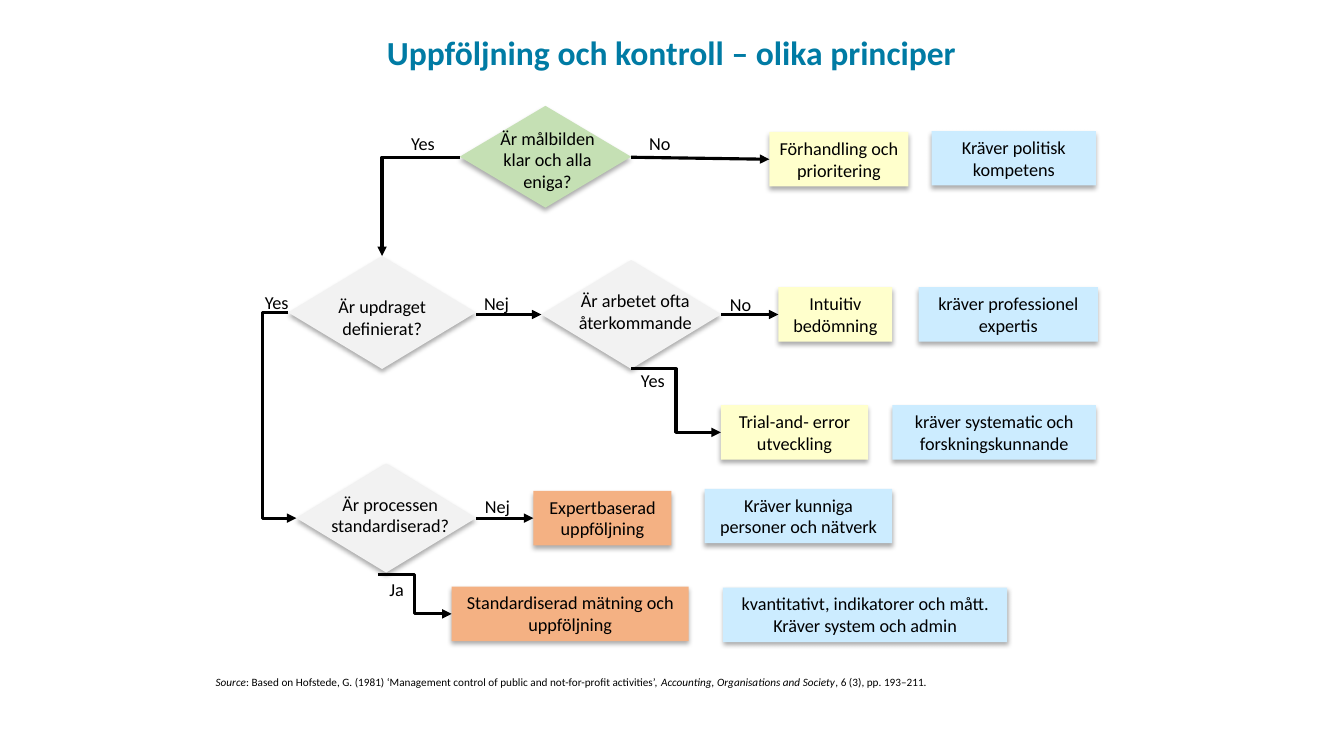
from dataclasses import dataclass

from lxml import etree
from pptx import Presentation
from pptx.dml.color import RGBColor
from pptx.enum.shapes import MSO_CONNECTOR, MSO_SHAPE
from pptx.enum.text import MSO_ANCHOR, MSO_AUTO_SIZE, PP_ALIGN
from pptx.oxml.ns import qn
from pptx.util import Inches, Pt

RECT, DIAMOND = MSO_SHAPE.RECTANGLE, MSO_SHAPE.DIAMOND
STRAIGHT, ELBOW = MSO_CONNECTOR.STRAIGHT, MSO_CONNECTOR.ELBOW
LEFT, CENTER = PP_ALIGN.LEFT, PP_ALIGN.CENTER
TOP, NO_FIT = MSO_ANCHOR.TOP, MSO_AUTO_SIZE.NONE

FONT = "Calibri"
BOX_H = 0.54
LABEL_W, LABEL_H = 0.57, 0.32
COLORS = {
    "black": "000000",
    "title": "007BA4",
    "blue": "CCECFF",
    "yellow": "FFFFCC",
    "orange": "F4B183",
    "green": "C5E0B4",
    "gray": "F2F2F2",
}

Area = tuple[float, float, float, float]
Point = tuple[float, float]


@dataclass
class Box:
    text: str
    left: float
    top: float
    width: float
    color: str


@dataclass
class Question:
    text: str
    area: Area
    text_area: Area
    color: str = "gray"


@dataclass
class Arrow:
    start: Point
    end: Point
    bend: float | None = None  # share of the width where the line turns
    corner: bool = False       # a single turn


@dataclass
class Label:
    text: str
    left: float
    top: float


BOXES = [
    Box("Kräver politisk kompetens", 9.24, 1.3, 1.63, "blue"),
    Box("kräver professionel expertis", 9.11, 2.85, 1.78, "blue"),
    Box("kräver systematic och forskningskunnande", 8.85, 4.02, 2.02, "blue"),
    Box("Kräver kunniga personer och nätverk", 6.99, 4.85, 1.86, "blue"),
    Box("kvantitativt, indikatorer och mått.\nKräver system och admin",
        7.17, 5.83, 2.82, "blue"),
    Box("Förhandling och prioritering", 7.63, 1.31, 1.38, "yellow"),
    Box("Intuitiv bedömning", 7.72, 2.85, 1.13, "yellow"),
    Box("Trial-and- error utveckling", 7.15, 4.02, 1.46, "yellow"),
    Box("Expertbaserad uppföljning", 5.29, 4.87, 1.37, "orange"),
    Box("Standardiserad mätning och uppföljning", 4.48, 5.82, 2.35, "orange"),
]
QUESTIONS = [
    Question("Är målbilden klar och alla eniga?",
             (4.56, 1.05, 1.7, 1.01), (4.71, 1.21, 1.44, 0.76), "green"),
    Question("Är updraget definierat?",
             (2.86, 2.54, 1.86, 1.12), (2.94, 2.88, 1.7, BOX_H)),
    Question("Är arbetet ofta återkommande",
             (5.37, 2.58, 1.78, 1.08), (5.46, 2.82, 1.68, BOX_H)),
    Question("Är processen standardiserad?",
             (2.94, 4.6, 1.78, 1.08), (3.03, 4.84, 1.68, BOX_H)),
]
ARROWS = [
    Arrow((6.26, 1.56), (7.63, 1.58)),
    Arrow((4.56, 1.56), (3.79, 2.54), corner=True),
    Arrow((4.72, 3.12), (5.37, 3.12)),
    Arrow((7.15, 3.12), (7.72, 3.12)),
    Arrow((6.26, 3.66), (7.15, 4.29), bend=0.5),
    Arrow((2.86, 3.1), (2.94, 5.14), bend=-3.2),
    Arrow((4.72, 5.14), (5.29, 5.14)),
    Arrow((3.75, 5.7), (4.48, 6.09), bend=0.5),
]
LABELS = [
    Label("Yes", 3.91, 1.26),
    Label("No", 6.26, 1.26),
    Label("Yes", 2.46, 2.84),
    Label("Nej", 4.64, 2.85),
    Label("No", 7.06, 2.86),
    Label("Yes", 6.19, 3.61),
    Label("Nej", 4.65, 4.86),
    Label("Ja", 3.65, 5.69),
]
SOURCE = [
    ("Source", True),
    (": Based on Hofstede, G. (1981) ‘Management control of public and "
     "not-for-profit activities’,", False),
    (" Accounting, Organisations and Society", True),
    (", 6 (3), pp. 193–211.", False),
]


def rgb(name: str) -> RGBColor:
    return RGBColor.from_string(COLORS[name])


def format_text(frame, size: float = 13, color: str = "black",
                align=CENTER, bold: bool = False) -> None:
    frame.word_wrap = True
    frame.auto_size = NO_FIT
    frame.vertical_anchor = TOP
    for para in frame.paragraphs:
        para.alignment = align
        font = para.font
        font.name, font.size, font.bold = FONT, Pt(size), bold
        font.color.rgb = rgb(color)


def add_text(slide, text: str, area: Area) -> None:
    frame = slide.shapes.add_textbox(*map(Inches, area)).text_frame
    frame.text = text
    format_text(frame)


def add_shape(slide, kind, area: Area, color: str):
    """Draw a filled shape without outline and with a soft shadow below."""
    shape = slide.shapes.add_shape(kind, *map(Inches, area))
    shape.fill.solid()
    shape.fill.fore_color.rgb = rgb(color)
    shape.line.fill.background()
    shape.shadow.inherit = False
    effects = shape._element.spPr.find(qn("a:effectLst"))
    shade = etree.SubElement(effects, qn("a:outerShdw"), blurRad=str(Pt(3.5)),
                             dist=str(Pt(2.2)), dir="5400000", rotWithShape="0")
    tint = etree.SubElement(shade, qn("a:srgbClr"), val=COLORS["black"])
    etree.SubElement(tint, qn("a:alpha"), val="32000")
    return shape


def add_box(slide, box: Box) -> None:
    area = (box.left, box.top, box.width, BOX_H)
    frame = add_shape(slide, RECT, area, box.color).text_frame
    frame.text = box.text
    format_text(frame)


def add_arrow(slide, arrow: Arrow) -> None:
    bent = arrow.corner or arrow.bend is not None
    line = slide.shapes.add_connector(ELBOW if bent else STRAIGHT,
                                      *map(Inches, arrow.start + arrow.end))
    line.line.color.rgb = rgb("black")
    line.line.width = Pt(2.25)
    props = line._element.spPr
    etree.SubElement(props.find(qn("a:ln")), qn("a:tailEnd"), type="triangle")
    etree.SubElement(props, qn("a:effectLst"))
    preset = props.find(qn("a:prstGeom"))
    if arrow.corner:
        preset.set("prst", "bentConnector2")
    elif bent:
        etree.SubElement(preset.find(qn("a:avLst")), qn("a:gd"), name="adj1",
                         fmla=f"val {round(arrow.bend * 100000)}")


def add_title(slide) -> None:
    title = slide.shapes.title
    title.left, title.top, title.width, title.height = map(
        Inches, (1.8, 0.27, 9.72, 0.5))
    title.text_frame.text = "Uppföljning och kontroll – olika principer"
    format_text(title.text_frame, 24, "title", bold=True)


def add_source(slide) -> None:
    area = (2.04, 6.65, 9.33, 0.24)
    frame = slide.shapes.add_textbox(*map(Inches, area)).text_frame
    for text, slant in SOURCE:
        run = frame.paragraphs[0].add_run()
        run.text, run.font.italic = text, slant
    format_text(frame, 8, align=LEFT)


def main() -> None:
    deck = Presentation()
    deck.slide_width, deck.slide_height = Inches(13.33), Inches(7.5)
    slide = deck.slides.add_slide(deck.slide_layouts.get_by_name("Title Only"))
    add_title(slide)
    for box in BOXES:
        add_box(slide, box)
    for item in QUESTIONS:
        add_shape(slide, DIAMOND, item.area, item.color)
        add_text(slide, item.text, item.text_area)
    for arrow in ARROWS:
        add_arrow(slide, arrow)
    for label in LABELS:
        add_text(slide, label.text, (label.left, label.top, LABEL_W, LABEL_H))
    add_source(slide)
    deck.save("out.pptx")


if __name__ == "__main__":
    main()
